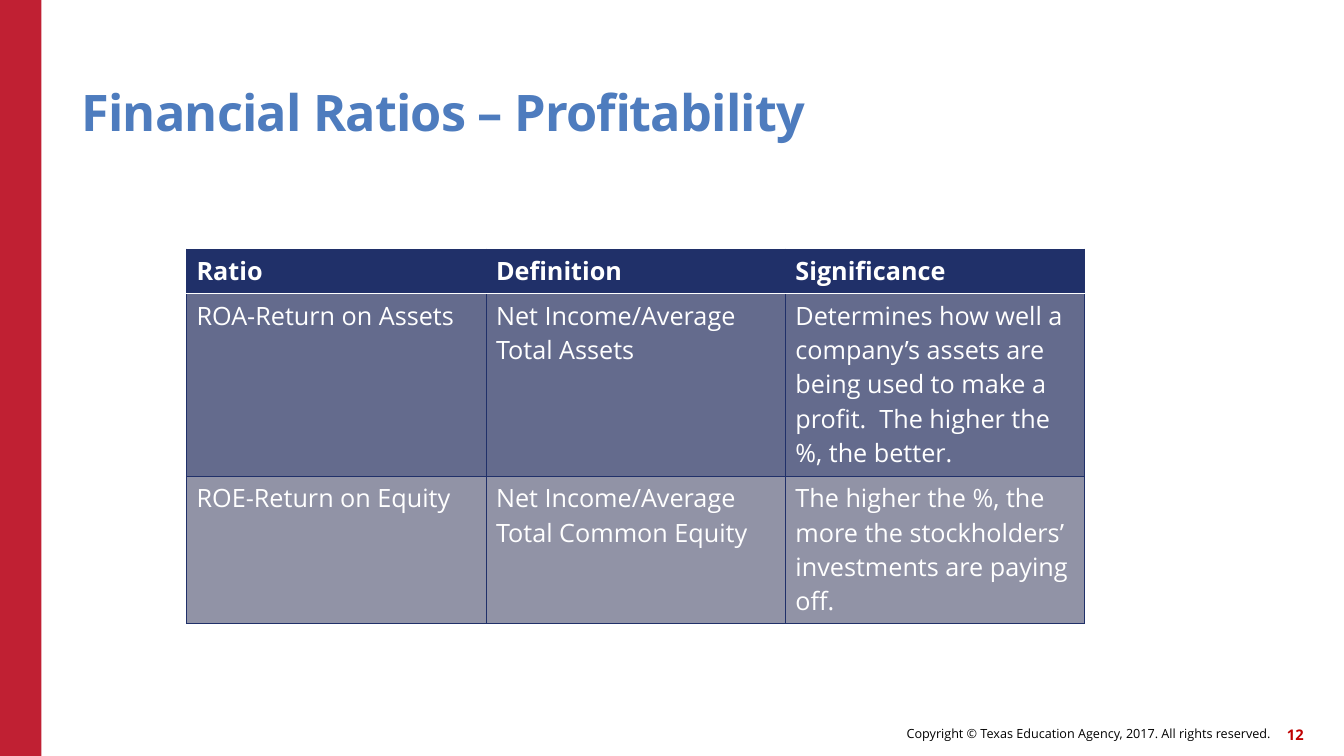
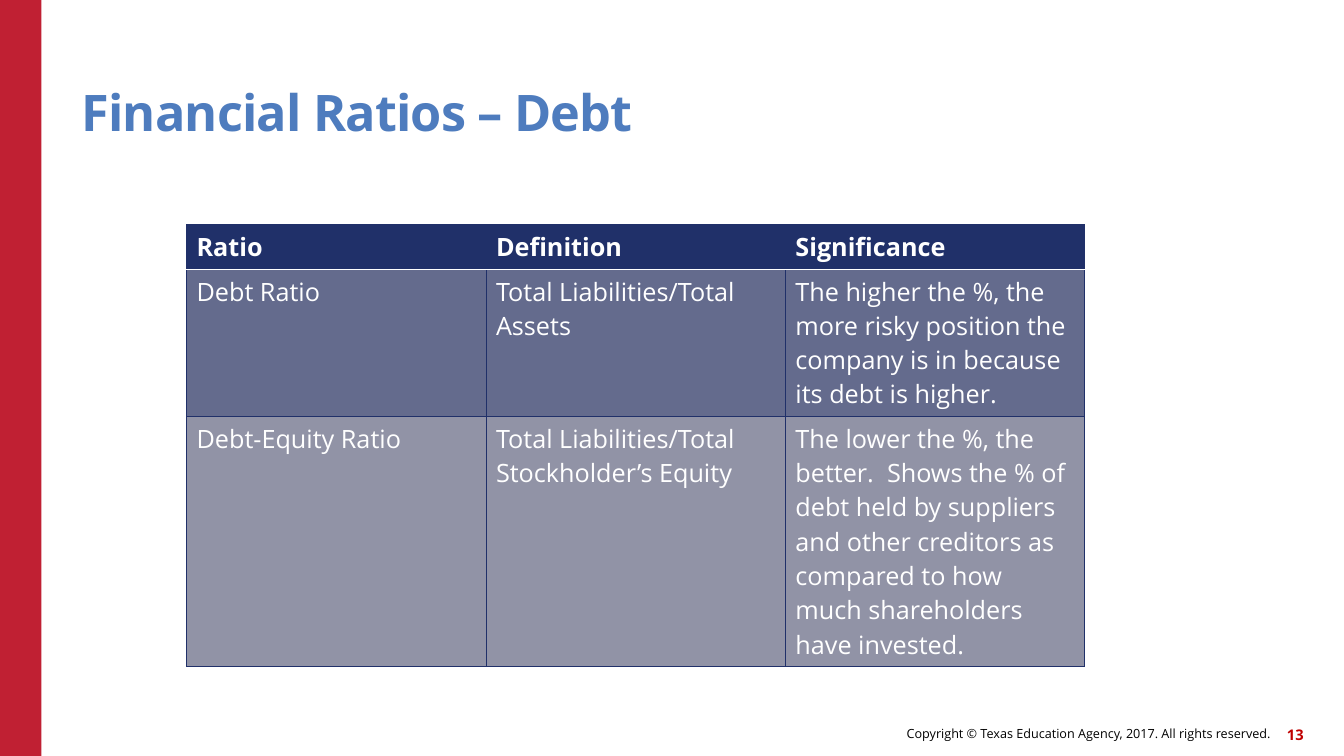
from dataclasses import dataclass

import lxml.etree
import pptx
import pptx.dml.color
import pptx.enum.shapes
import pptx.enum.text
import pptx.oxml.ns
import pptx.presentation
import pptx.shapes.base
import pptx.slide
import pptx.table
import pptx.text.text
import pptx.util

Inches = pptx.util.Inches
ANCHOR = pptx.enum.text.MSO_ANCHOR
ALIGN = pptx.enum.text.PP_ALIGN


@dataclass(frozen=True)
class Theme:
    font: str = "Open Sans"
    band: str = "C02033"
    title: str = "4E7CBE"
    navy: str = "203069"
    row_fills: tuple[str, ...] = ("203069", "646B8D", "9193A6")
    white: str = "FFFFFF"
    black: str = "000000"
    page_number: str = "C00000"
    title_size: float = 36
    table_size: float = 18
    footer_size: float = 9
    page_number_size: float = 10.5


@dataclass(frozen=True)
class Box:
    left: float
    top: float
    width: float
    height: float

    def lengths(self) -> tuple[pptx.util.Length, ...]:
        return tuple(Inches(value) for value in (self.left, self.top, self.width, self.height))


@dataclass(frozen=True)
class RatioRow:
    ratio: str
    definition: str
    significance: str
    height: float

    def texts(self) -> tuple[str, ...]:
        return self.ratio, self.definition, self.significance


@dataclass(frozen=True)
class RatioSlide:
    page: int
    title: str
    table_top: float
    rows: tuple[RatioRow, ...]


THEME = Theme()
BAND = Box(0, 0, 0.41, 7.5)
TITLE = Box(0.81, 0.45, 11, 0.96)
COPYRIGHT = Box(6.14, 7.12, 6.46, 0.32)
PAGE_NUMBER = Box(12.51, 7.13, 0.42, 0.32)
TABLE_LEFT = 1.85
COLUMN_WIDTH = 2.97
TITLE_ONLY_LAYOUT = 5
COPYRIGHT_TEXT = "Copyright © Texas Education Agency, 2017. All rights reserved."
HEADER = RatioRow("Ratio", "Definition", "Significance", 0.44)

SLIDES = (
    RatioSlide(12, "Financial Ratios – Profitability", 2.47, (
        RatioRow("ROA-Return on Assets", "Net Income/Average Total Assets",
                 "Determines how well a company’s assets are being used to make a profit.  "
                 "The higher the %, the better.", 1.81),
        RatioRow("ROE-Return on Equity", "Net Income/Average Total Common Equity",
                 "The higher the %, the more the stockholders’ investments are paying off.", 1.46),
    )),
    RatioSlide(13, "Financial Ratios – Debt", 2.23, (
        RatioRow("Debt Ratio", "Total Liabilities/Total Assets",
                 "The higher the %, the more risky position the company is in because "
                 "its debt is higher.", 1.46),
        RatioRow("Debt-Equity Ratio", "Total Liabilities/Total Stockholder’s Equity",
                 "The lower the %, the better.  Shows the % of debt held by suppliers and other "
                 "creditors as compared to how much shareholders have invested.", 2.48),
    )),
)


def rgb(color: str) -> pptx.dml.color.RGBColor:
    return pptx.dml.color.RGBColor.from_string(color)


def write_text(frame: pptx.text.text.TextFrame, text: str, size: float, color: str,
               bold: bool = False, align: ALIGN = ALIGN.LEFT) -> pptx.text.text._Paragraph:
    frame.word_wrap = True
    paragraph = frame.paragraphs[0]
    paragraph.text = text
    paragraph.alignment = align
    paragraph.font.name = THEME.font
    paragraph.font.size = pptx.util.Pt(size)
    paragraph.font.bold = bold
    paragraph.font.color.rgb = rgb(color)
    return paragraph


def set_frame(frame: pptx.text.text.TextFrame, anchor: ANCHOR) -> None:
    frame.auto_size = pptx.enum.text.MSO_AUTO_SIZE.NONE
    frame.vertical_anchor = anchor
    frame.margin_left = frame.margin_right = frame.margin_top = frame.margin_bottom = 0


def add_band(slide: pptx.slide.Slide) -> None:
    shape = slide.shapes.add_shape(pptx.enum.shapes.MSO_SHAPE.RECTANGLE, *BAND.lengths())
    shape.shadow.inherit = False
    shape.fill.solid()
    shape.fill.fore_color.rgb = rgb(THEME.band)
    shape.line.fill.background()


def add_footer_text(slide: pptx.slide.Slide, box: Box, text: str, size: float,
                    color: str, bold: bool = False) -> None:
    frame = slide.shapes.add_textbox(*box.lengths()).text_frame
    set_frame(frame, ANCHOR.MIDDLE)
    write_text(frame, text, size, color, bold, ALIGN.RIGHT)


def set_title(slide: pptx.slide.Slide, text: str) -> None:
    shape = slide.shapes.title
    shape.left, shape.top, shape.width, shape.height = TITLE.lengths()
    set_frame(shape.text_frame, ANCHOR.BOTTOM)
    paragraph = write_text(shape.text_frame, text, THEME.title_size, THEME.title, bold=True)
    paragraph.line_spacing = 0.9
    paragraph.runs[0]._r.get_or_add_rPr().set("spc", "-60")


def add_border(cell: pptx.table._Cell, side: str, color: str, width: float) -> None:
    qn = pptx.oxml.ns.qn
    properties = cell._tc.get_or_add_tcPr()
    line = lxml.etree.SubElement(properties, qn(f"a:ln{side}"), w=str(pptx.util.Pt(width)))
    fill = lxml.etree.SubElement(line, qn("a:solidFill"))
    lxml.etree.SubElement(fill, qn("a:srgbClr"), val=color)


def add_ratio_table(slide: pptx.slide.Slide, top: float, rows: tuple[RatioRow, ...]) -> None:
    columns = len(HEADER.texts())
    box = Box(TABLE_LEFT, top, columns * COLUMN_WIDTH, sum(row.height for row in rows))
    table = slide.shapes.add_table(len(rows), columns, *box.lengths()).table
    for column in table.columns:
        column.width = Inches(COLUMN_WIDTH)
    for row_index, row in enumerate(rows):
        table.rows[row_index].height = Inches(row.height)
        header_edge = {0: "B", 1: "T"}.get(row_index)
        for column_index, text in enumerate(row.texts()):
            cell = table.cell(row_index, column_index)
            for side in "LRTB":
                if side == header_edge:
                    add_border(cell, side, THEME.white, 1)
                else:
                    add_border(cell, side, THEME.navy, 0.5)
            cell.fill.solid()
            cell.fill.fore_color.rgb = rgb(THEME.row_fills[row_index])
            write_text(cell.text_frame, text, THEME.table_size, THEME.white, row_index == 0)


def add_ratio_slide(presentation: pptx.presentation.Presentation, content: RatioSlide) -> None:
    slide = presentation.slides.add_slide(presentation.slide_layouts[TITLE_ONLY_LAYOUT])
    add_band(slide)
    add_footer_text(slide, COPYRIGHT, COPYRIGHT_TEXT, THEME.footer_size, THEME.black)
    add_footer_text(slide, PAGE_NUMBER, str(content.page), THEME.page_number_size,
                    THEME.page_number, bold=True)
    set_title(slide, content.title)
    add_ratio_table(slide, content.table_top, (HEADER, *content.rows))


def main() -> None:
    presentation = pptx.Presentation()
    presentation.slide_width = Inches(13.33)
    presentation.slide_height = Inches(7.5)
    for content in SLIDES:
        add_ratio_slide(presentation, content)
    presentation.save("out.pptx")


if __name__ == "__main__":
    main()
